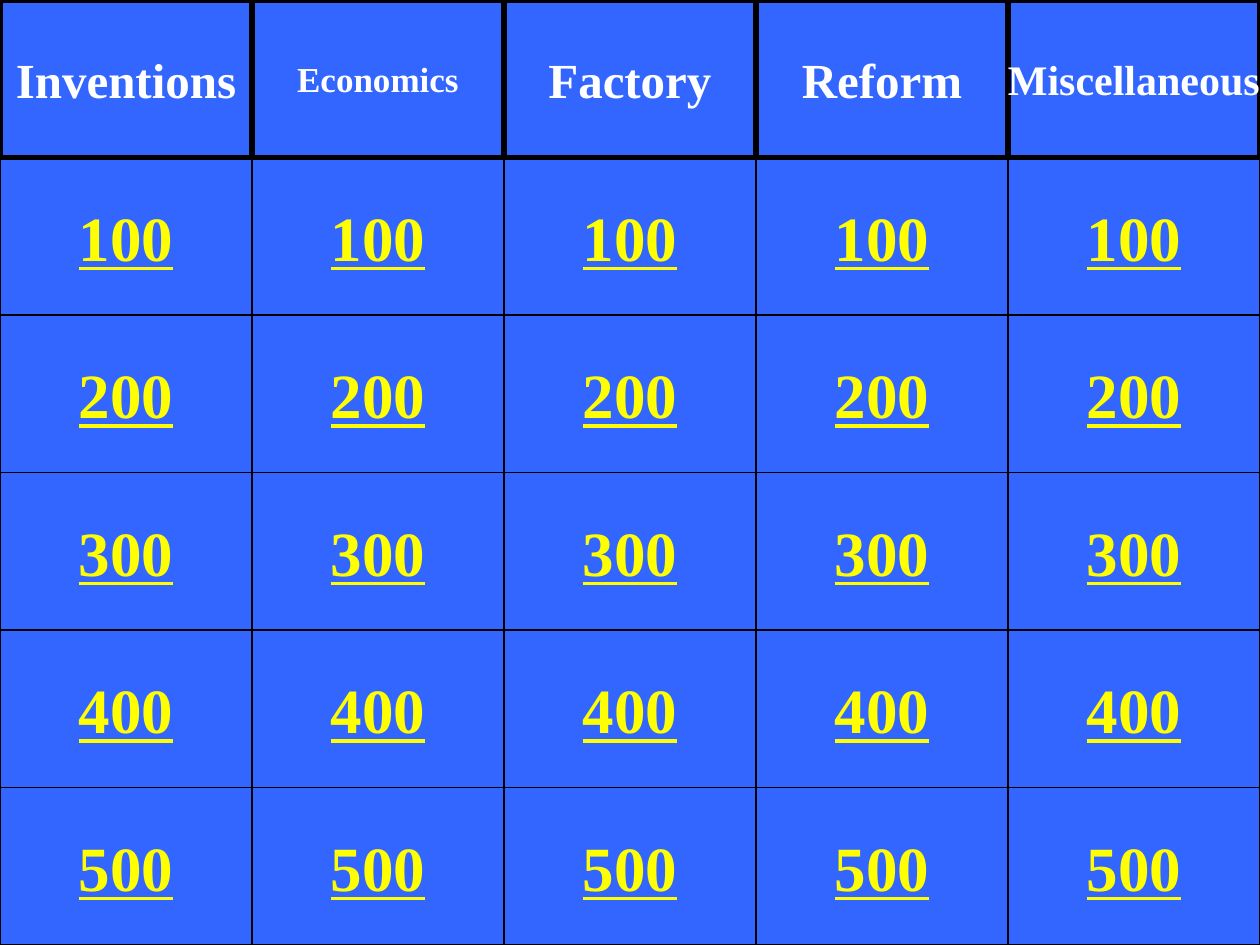
from pptx import Presentation
from pptx.dml.color import RGBColor
from pptx.enum.shapes import MSO_SHAPE as Shape
from pptx.enum.text import MSO_ANCHOR as Anchor, PP_ALIGN as Align
from pptx.util import Inches, Pt

BLUE, BLACK, WHITE, YELLOW = "3366FF", "000000", "FFFFFF", "FFFF00"
FONT = "Times New Roman"
CELL_WIDTH, CELL_HEIGHT = 2, 1.25

CATEGORIES = [
    ("Inventions", 28),
    ("Economics", 20),
    ("Factory", 28),
    ("Reform", 28),
    ("Miscellaneous", 24),
]
POINTS = [100, 200, 300, 400, 500]


def paint(fill, color):
    fill.solid()
    fill.fore_color.rgb = RGBColor.from_string(color)


def add_cell(page, kind, column, row, text, *, size, color, border, underline=None):
    """Add one box of the game board at a grid position."""
    box = page.shapes.add_shape(
        kind,
        Inches(column * CELL_WIDTH), Inches(row * CELL_HEIGHT),
        Inches(CELL_WIDTH), Inches(CELL_HEIGHT),
    )
    box.shadow.inherit = False
    paint(box.fill, BLUE)
    paint(box.line.fill, BLACK)
    box.line.width = Pt(border)

    frame = box.text_frame
    frame.word_wrap = False
    frame.vertical_anchor = Anchor.MIDDLE
    para = frame.paragraphs[0]
    para.alignment = Align.CENTER
    span = para.add_run()
    span.text = text
    font = span.font
    font.name, font.size = FONT, Pt(size)
    font.bold, font.underline = True, underline
    paint(font.fill, color)


def add_point_button(page, column, row, points):
    add_cell(page, Shape.ACTION_BUTTON_CUSTOM, column, row, str(points),
             size=36, color=YELLOW, border=0.75, underline=True)


def add_category(page, column, name, size):
    add_cell(page, Shape.RECTANGLE, column, 0, name,
             size=size, color=WHITE, border=3)


def main():
    deck = Presentation()
    deck.slide_width, deck.slide_height = Inches(10), Inches(7.5)
    page = deck.slides.add_slide(deck.slide_layouts[6])
    paint(page.background.fill, BLUE)

    for column in range(len(CATEGORIES)):
        for row, points in enumerate(POINTS, start=1):
            add_point_button(page, column, row, points)
    # Headings come last so that their thick borders lie on top.
    for column, (name, size) in enumerate(CATEGORIES):
        add_category(page, column, name, size)

    deck.save("out.pptx")


if __name__ == "__main__":
    main()
